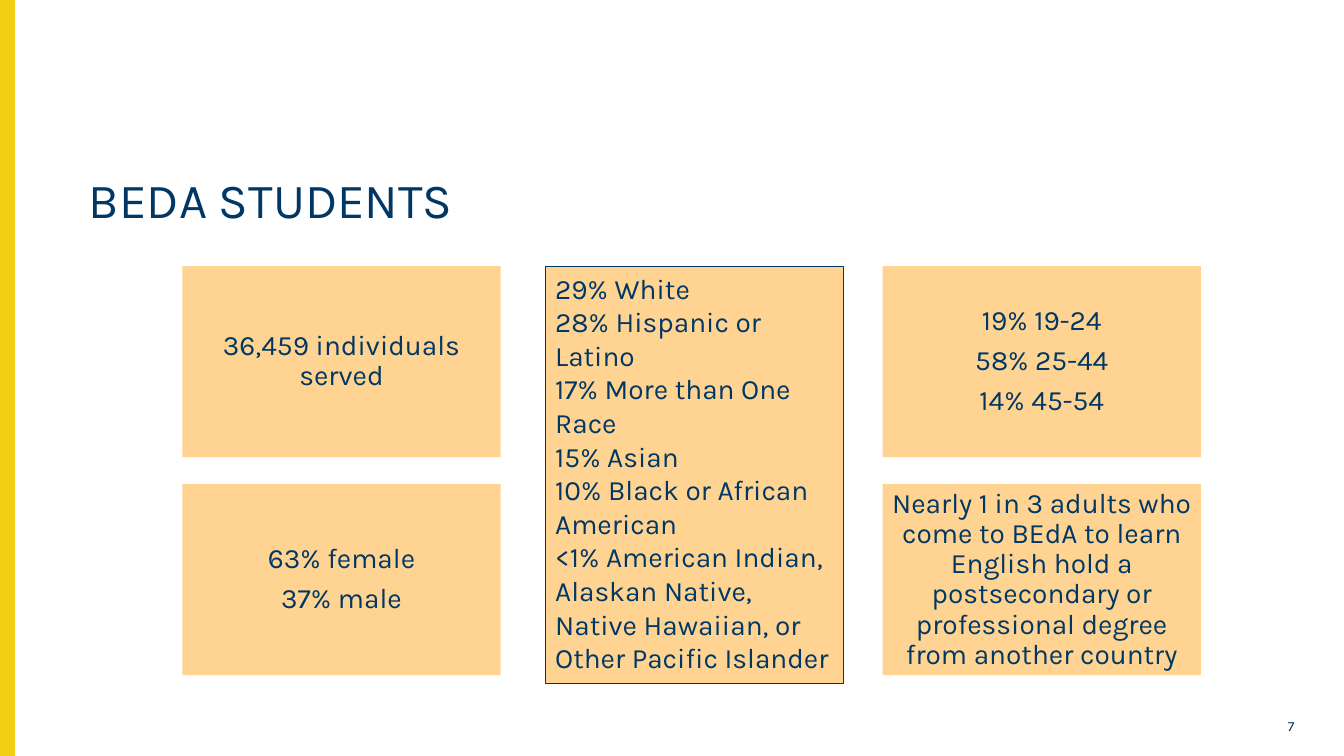
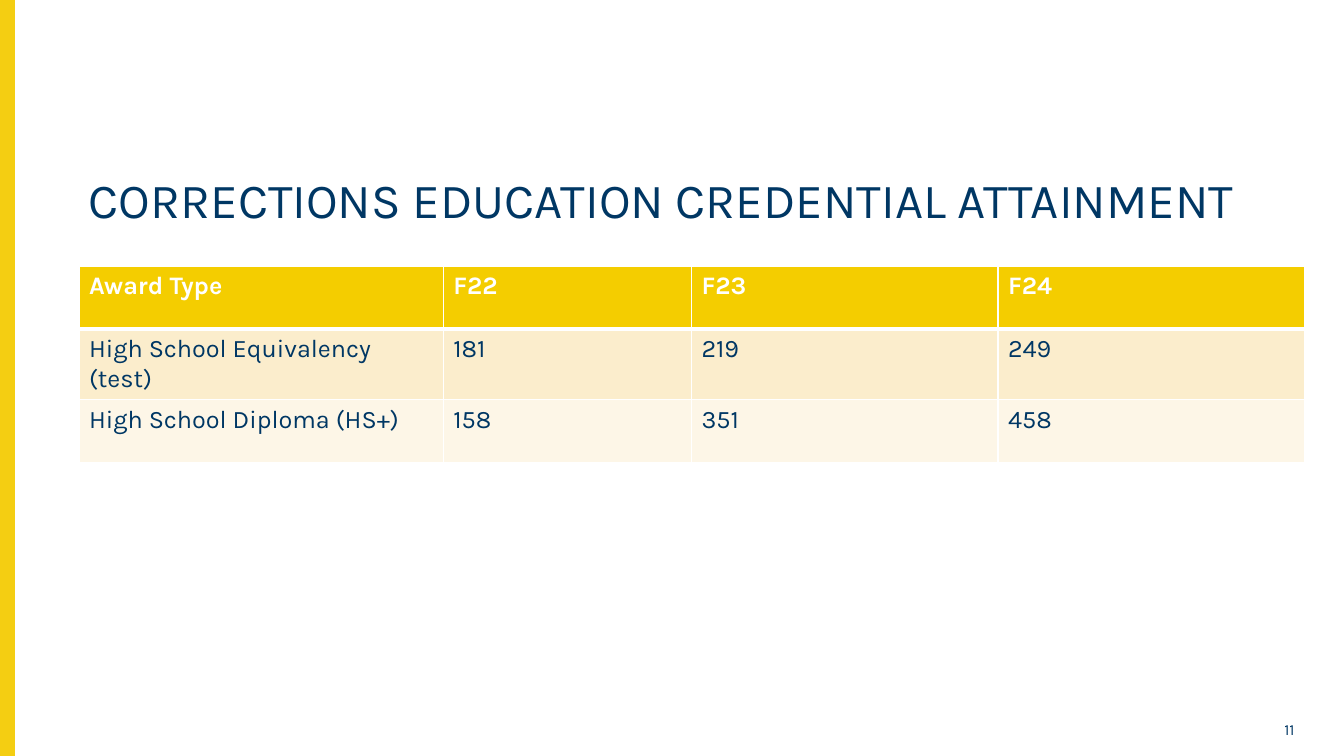
"""Build two slides on adult basic education students and credentials."""
from dataclasses import dataclass

import lxml.etree
import pptx
import pptx.dml.color
import pptx.enum.shapes
import pptx.enum.text
import pptx.oxml.ns
import pptx.presentation
import pptx.shapes.autoshape
import pptx.slide
import pptx.table
import pptx.text.text
import pptx.util

Pt = pptx.util.Pt
ALIGN = pptx.enum.text.PP_ALIGN
ANCHOR = pptx.enum.text.MSO_ANCHOR

COLOURS = {
    "navy": "003764",
    "band": "F4CE12",
    "card": "FFD391",
    "header": "F4CD00",
    "odd_row": "FBEDCC",
    "even_row": "FDF6E7",
    "white": "FFFFFF",
}
FONT = "Karla"
SLIDE_WIDTH, SLIDE_HEIGHT = 960, 540
CONTENT_LEFT, CONTENT_TOP, CONTENT_WIDTH = 56.4, 190.1, 875.5
CARD_WIDTH, CARD_HEIGHT = 227.4, 136.4
CARD_COLUMNS = (130.3, 630.5)
CARD_ROWS = (CONTENT_TOP, 345.8)


@dataclass(frozen=True)
class Box:
    left: float
    top: float
    width: float
    height: float

    def lengths(self) -> tuple[pptx.util.Length, ...]:
        return Pt(self.left), Pt(self.top), Pt(self.width), Pt(self.height)


@dataclass(frozen=True)
class TextStyle:
    size: float
    colour: str = "navy"
    bold: bool = False
    align: ALIGN = ALIGN.LEFT
    line_spacing: float = 1.0
    space_after: float = 0


@dataclass(frozen=True)
class Card:
    column: int
    row: int
    lines: tuple[str, ...]


TITLE_BOX = Box(CONTENT_LEFT, 122.4, CONTENT_WIDTH, 62.6)
NUMBER_BOX = Box(882.7, 510.5, 49, 18.7)
ETHNICITY_BOX = Box(389.5, CONTENT_TOP, 213.1, 298.1)
TITLE_STYLE = TextStyle(35, line_spacing=0.9)
CARD_STYLE = TextStyle(20, align=ALIGN.CENTER, line_spacing=0.9, space_after=7)
LIST_STYLE = TextStyle(20)
HEADER_STYLE = TextStyle(18, "white", bold=True)
CELL_STYLE = TextStyle(18)

CARDS = (
    Card(0, 0, ("36,459 individuals served",)),
    Card(0, 1, ("63% female", "37% male")),
    Card(1, 0, ("19% 19-24", "58% 25-44", "14% 45-54")),
    Card(1, 1, (
        "Nearly 1 in 3 adults who come to BEdA to learn English hold a "
        "postsecondary or professional degree from another country",
    )),
)
ETHNICITIES = (
    "29% White",
    "28% Hispanic or Latino",
    "17% More than One Race",
    "15% Asian",
    "10% Black or African American",
    "<1% American Indian, Alaskan Native, Native Hawaiian, or Other Pacific Islander",
)
AWARDS = (
    ("Award Type", "F22", "F23", "F24"),
    ("High School Equivalency (test)", "181", "219", "249"),
    ("High School Diploma (HS+)", "158", "351", "458"),
)
AWARD_WIDTHS = (260.3, 177.2, 219, 219)
AWARD_ROW_HEIGHT = 45.1
ROW_FILLS = ("header", "odd_row", "even_row")


def colour(name: str) -> pptx.dml.color.RGBColor:
    return pptx.dml.color.RGBColor.from_string(COLOURS[name])


def write(frame: pptx.text.text.TextFrame, lines: tuple[str, ...], style: TextStyle) -> None:
    frame.word_wrap = True
    frame.text = "\n".join(lines)
    for paragraph in frame.paragraphs:
        paragraph.alignment = style.align
        paragraph.line_spacing = style.line_spacing
        paragraph.space_after = Pt(style.space_after)
        paragraph.font.name = FONT
        paragraph.font.size = Pt(style.size)
        paragraph.font.bold = style.bold
        paragraph.font.color.rgb = colour(style.colour)


def add_text(slide: pptx.slide.Slide, box: Box, text: str, style: TextStyle) -> None:
    frame = slide.shapes.add_textbox(*box.lengths()).text_frame
    frame.vertical_anchor = ANCHOR.TOP
    write(frame, (text,), style)


def add_rectangle(
    slide: pptx.slide.Slide, box: Box, fill: str, line: str = "", line_width: float = 1
) -> pptx.shapes.autoshape.Shape:
    shape = slide.shapes.add_shape(pptx.enum.shapes.MSO_SHAPE.RECTANGLE, *box.lengths())
    shape.shadow.inherit = False
    shape.fill.solid()
    shape.fill.fore_color.rgb = colour(fill)
    if line:
        shape.line.color.rgb = colour(line)
        shape.line.width = Pt(line_width)
    else:
        shape.line.fill.background()
    return shape


def add_slide(
    presentation: pptx.presentation.Presentation, title: str, number: str, number_style: TextStyle
) -> pptx.slide.Slide:
    slide = presentation.slides.add_slide(presentation.slide_layouts[6])
    add_rectangle(slide, Box(0, 0, 10.5, SLIDE_HEIGHT), "band", "band")
    add_text(slide, TITLE_BOX, title, TITLE_STYLE)
    add_text(slide, NUMBER_BOX, number, number_style)
    return slide


def add_card(slide: pptx.slide.Slide, card: Card) -> None:
    box = Box(CARD_COLUMNS[card.column], CARD_ROWS[card.row], CARD_WIDTH, CARD_HEIGHT)
    frame = add_rectangle(slide, box, "card").text_frame
    frame.margin_left = frame.margin_right = Pt(5.76)
    frame.margin_top = frame.margin_bottom = Pt(5.76)
    frame.vertical_anchor = ANCHOR.MIDDLE
    write(frame, card.lines, CARD_STYLE)


def add_ethnicities(slide: pptx.slide.Slide) -> None:
    frame = add_rectangle(slide, ETHNICITY_BOX, "card", "navy", 0.75).text_frame
    frame.vertical_anchor = ANCHOR.TOP
    frame.auto_size = pptx.enum.text.MSO_AUTO_SIZE.SHAPE_TO_FIT_TEXT
    write(frame, ETHNICITIES, LIST_STYLE)


def set_borders(cell: pptx.table._Cell, top: float, bottom: float) -> None:
    qualified = pptx.oxml.ns.qn
    properties = cell._tc.get_or_add_tcPr()
    for side, width in (("L", 1), ("R", 1), ("T", top), ("B", bottom)):
        line = lxml.etree.SubElement(properties, qualified(f"a:ln{side}"), w=str(Pt(width)))
        fill = lxml.etree.SubElement(line, qualified("a:solidFill"))
        lxml.etree.SubElement(fill, qualified("a:srgbClr"), val=COLOURS["white"])


def add_awards(slide: pptx.slide.Slide) -> None:
    box = Box(CONTENT_LEFT, CONTENT_TOP, CONTENT_WIDTH, AWARD_ROW_HEIGHT * len(AWARDS))
    table = slide.shapes.add_table(len(AWARDS), len(AWARD_WIDTHS), *box.lengths()).table
    for column, width in zip(table.columns, AWARD_WIDTHS):
        column.width = Pt(width)
    for index, (row, values) in enumerate(zip(table.rows, AWARDS)):
        row.height = Pt(AWARD_ROW_HEIGHT)
        for cell, value in zip(row.cells, values):
            set_borders(cell, 3 if index == 1 else 1, 3 if index == 0 else 1)
            cell.fill.solid()
            cell.fill.fore_color.rgb = colour(ROW_FILLS[index])
            write(cell.text_frame, (value,), CELL_STYLE if index else HEADER_STYLE)


def main() -> None:
    presentation = pptx.Presentation()
    presentation.slide_width = Pt(SLIDE_WIDTH)
    presentation.slide_height = Pt(SLIDE_HEIGHT)

    students = add_slide(
        presentation, "BEDA STUDENTS", "7",
        TextStyle(10, align=ALIGN.RIGHT, line_spacing=0.9, space_after=6),
    )
    for card in CARDS:
        add_card(students, card)
    add_ethnicities(students)

    credentials = add_slide(
        presentation, "CORRECTIONS EDUCATION CREDENTIAL ATTAINMENT", "11",
        TextStyle(11, align=ALIGN.RIGHT),
    )
    add_awards(credentials)
    presentation.save("out.pptx")


if __name__ == "__main__":
    main()
